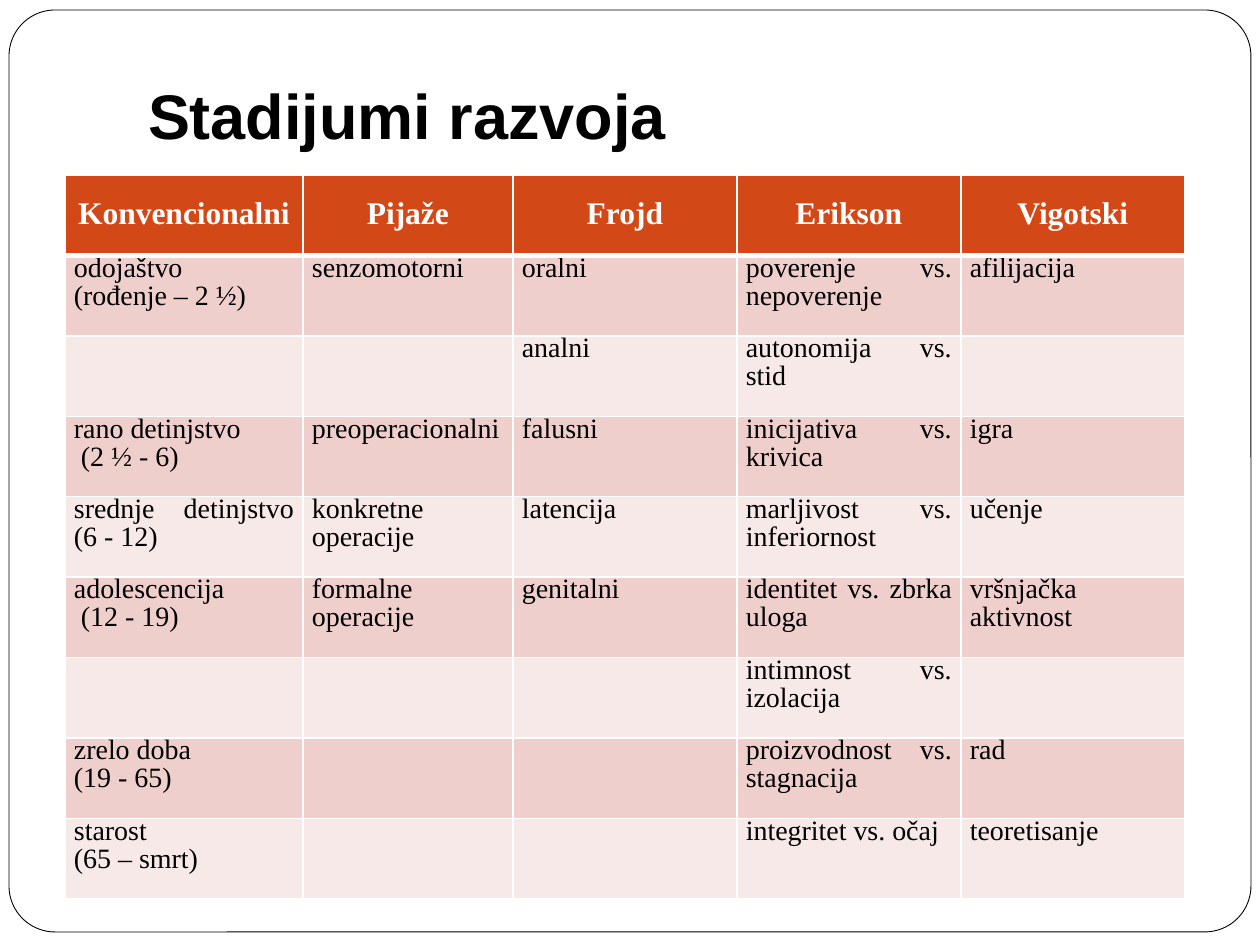
import dataclasses

import pptx
import pptx.dml.color
import pptx.enum.shapes
import pptx.enum.text
import pptx.oxml
import pptx.oxml.ns
import pptx.util

PX = 914400 / 126
ALIGN = pptx.enum.text.PP_ALIGN
ANCHOR = pptx.enum.text.MSO_ANCHOR


@dataclasses.dataclass(frozen=True)
class Theme:
    ink: str = "000000"
    paper: str = "FFFFFF"
    header: str = "D34817"
    bands: tuple = ("EFCFCC", "F7E9E8")
    title_font: str = "Arial"
    table_font: str = "Times New Roman"
    title_size: int = 36
    header_size: int = 18
    body_size: int = 16


def px(length):
    return pptx.util.Emu(round(length * PX))


def rgb(value):
    return pptx.dml.color.RGBColor.from_string(value)


def apply(target, values):
    for name, value in values.items():
        setattr(target, name, value)


class StageSlide:
    def __init__(self, deck, theme):
        self.theme = theme
        self.slide = deck.slides.add_slide(deck.slide_layouts[5])

    def style(self, paragraph, font, size, color, bold):
        apply(paragraph.font, {"name": font, "size": pptx.util.Pt(size), "bold": bold})
        paragraph.font.color.rgb = rgb(color)

    def title(self, text, left, top, width, height):
        heading = self.slide.shapes.title
        apply(heading, {"left": px(left), "top": px(top),
                        "width": px(width), "height": px(height)})
        heading.text = text
        apply(heading.text_frame, {
            "vertical_anchor": ANCHOR.BOTTOM, "word_wrap": True,
            "auto_size": pptx.enum.text.MSO_AUTO_SIZE.NONE,
            "margin_left": px(30), "margin_right": px(13),
            "margin_top": px(6), "margin_bottom": px(13)})
        paragraph = heading.text_frame.paragraphs[0]
        paragraph.alignment = ALIGN.LEFT
        self.style(paragraph, self.theme.title_font, self.theme.title_size,
                   self.theme.ink, True)

    def frame(self, left, top, width, height):
        border = self.slide.shapes.add_shape(
            pptx.enum.shapes.MSO_SHAPE.ROUNDED_RECTANGLE,
            px(left), px(top), px(width), px(height))
        border.adjustments[0] = 0.05
        border.shadow.inherit = False
        border.fill.solid()
        border.fill.fore_color.rgb = rgb(self.theme.paper)
        border.line.color.rgb = rgb(self.theme.ink)
        border.line.width = pptx.util.Pt(0.5)
        self.slide.shapes.title.element.addprevious(border.element)

    def cell_borders(self, cell, top, bottom):
        properties = cell._tc.get_or_add_tcPr()
        for side, points in {"L": 1, "R": 1, "T": top, "B": bottom}.items():
            properties.append(pptx.oxml.parse_xml(
                f'<a:ln{side} {pptx.oxml.ns.nsdecls("a")} w="{pptx.util.Pt(points)}">'
                f'<a:solidFill><a:srgbClr val="{self.theme.paper}"/></a:solidFill>'
                f'</a:ln{side}>'))

    def cell(self, cell, text, row):
        theme = self.theme
        is_header = row == 0
        self.cell_borders(cell, 3 if row == 1 else 1, 3 if is_header else 1)
        cell.fill.solid()
        cell.fill.fore_color.rgb = rgb(
            theme.header if is_header else theme.bands[(row - 1) % 2])
        apply(cell, {"margin_left": px(9), "margin_right": px(9),
                     "margin_top": 0, "margin_bottom": 0,
                     "vertical_anchor": ANCHOR.MIDDLE if is_header else ANCHOR.TOP})
        cell.text = text
        size = theme.header_size if is_header else theme.body_size
        for paragraph in cell.text_frame.paragraphs:
            apply(paragraph, {"alignment": ALIGN.CENTER if is_header else ALIGN.JUSTIFY,
                              "line_spacing": pptx.util.Pt(size)})
            self.style(paragraph, theme.table_font, size,
                       theme.paper if is_header else theme.ink, is_header)

    def table(self, rows, widths, left, top, height):
        stages = self.slide.shapes.add_table(
            len(rows), len(widths), px(left), px(top),
            px(sum(widths)), px(height)).table
        for column, width in zip(stages.columns, widths):
            column.width = px(width)
        for row, texts in enumerate(rows):
            for column, text in enumerate(texts):
                self.cell(stages.cell(row, column), text, row)


STAGES = [
    ("Konvencionalni", "Pijaže", "Frojd", "Erikson", "Vigotski"),
    ("odojaštvo\n(rođenje – 2 ½)", "senzomotorni", "oralni",
     "poverenje vs. nepoverenje", "afilijacija"),
    ("", "", "analni", "autonomija vs. stid", ""),
    ("rano detinjstvo\n (2 ½ - 6)", "preoperacionalni", "falusni",
     "inicijativa vs. krivica", "igra"),
    ("srednje detinjstvo (6 - 12)", "konkretne operacije", "latencija",
     "marljivost vs. inferiornost", "učenje"),
    ("adolescencija\n (12 - 19)", "formalne operacije", "genitalni",
     "identitet vs. zbrka uloga", "vršnjačka aktivnost"),
    ("", "", "", "intimnost vs. izolacija", ""),
    ("zrelo doba\n(19 - 65)", "", "", "proizvodnost vs. stagnacija", "rad"),
    ("starost\n(65 – smrt)", "", "", "integritet vs. očaj", "teoretisanje"),
]


def main():
    deck = pptx.Presentation()
    apply(deck, {"slide_width": px(1260), "slide_height": px(945)})
    page = StageSlide(deck, Theme())
    page.title("Stadijumi razvoja", 118, 39, 1071, 126)
    page.frame(9, 10, 1242, 922)
    page.table(STAGES, (238, 210, 224, 224, 224), 65, 175, 724)
    deck.save("out.pptx")


if __name__ == "__main__":
    main()
